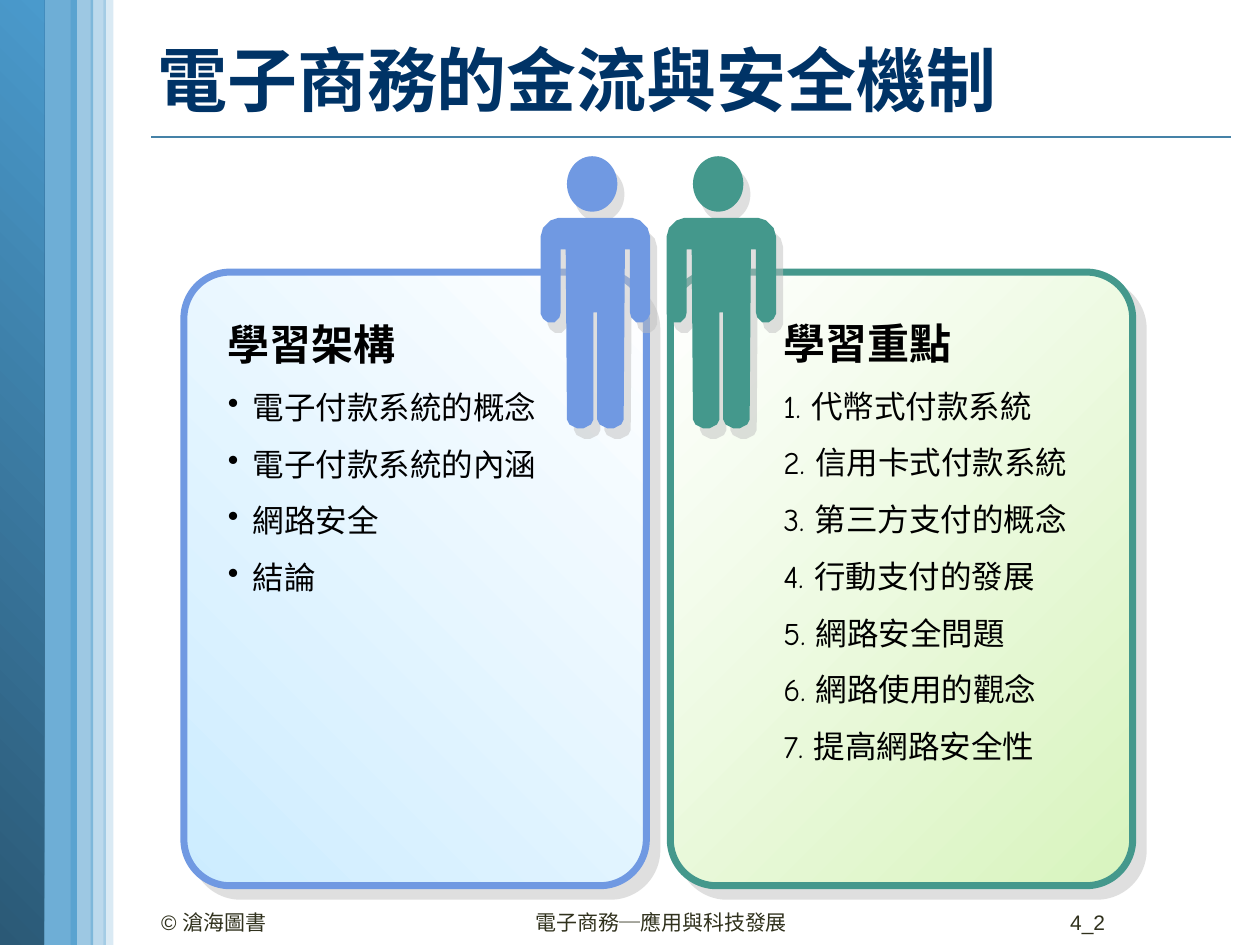
from lxml import etree
from pptx import Presentation
from pptx.dml.color import RGBColor
from pptx.enum.shapes import MSO_CONNECTOR, MSO_SHAPE
from pptx.enum.text import MSO_ANCHOR, MSO_AUTO_SIZE, PP_ALIGN
from pptx.oxml.ns import qn
from pptx.util import Inches, Pt

RECT, ROUND, OVAL = MSO_SHAPE.RECTANGLE, MSO_SHAPE.ROUNDED_RECTANGLE, MSO_SHAPE.OVAL
LEFT, RIGHT = PP_ALIGN.LEFT, PP_ALIGN.RIGHT
TOP, MID = MSO_ANCHOR.TOP, MSO_ANCHOR.MIDDLE
GROW, FIXED = MSO_AUTO_SIZE.SHAPE_TO_FIT_TEXT, MSO_AUTO_SIZE.NONE

HEX = {
    "navy": "003366", "rule": "4582A7", "sky": "4A9ACC", "deep": "2B5976",
    "foot": "30311D", "black": "000000", "white": "FFFFFF", "shade": "C0C0C0",
    "blue": "7099E2", "ice": "CCECFF", "green": "44988C", "lime": "D8F4BE",
}

TITLE = "電子商務的金流與安全機制"
FOOTER = [
    ("© 滄海圖書", 1.18, 2.33, LEFT),
    ("電子商務─應用與科技發展", 4.15, 2.36, LEFT),
    ("4_2", 8.15, 0.72, RIGHT),
]
PANELS = [
    {"tone": "blue", "fade": ("ice", "white", 45), "left": 1.46, "man": 4.29,
     "text": (1.71, 2.28, 3.1, 2.52), "head": "學習架構", "dent": 0.2, "mark": "•",
     "items": ["電子付款系統的概念", "電子付款系統的內涵", "網路安全", "結論"]},
    {"tone": "green", "fade": ("white", "lime", 315), "left": 5.32, "man": 5.29,
     "text": (6.12, 2.27, 2.83, 3.89), "head": "學習重點", "dent": 0.38, "mark": "",
     "items": ["1. 代幣式付款系統", "2. 信用卡式付款系統", "3. 第三方支付的概念",
               "4. 行動支付的發展", "5. 網路安全問題", "6. 網路使用的觀念",
               "7. 提高網路安全性"]},
]
BANDS = [
    (0.3, 0.31, "sky", 80), (-0.01, 0.36, None, 100), (0.82, 0.08, "sky", 20),
    (0.56, 0.18, "sky", 54), (0.72, 0.12, "sky", 37),
]
HALF = [
    (14, 0), (8, 2), (2, 8), (0, 15), (0, 76), (2, 80), (6, 83), (11, 83),
    (15, 79), (16, 75), (16, 25), (20, 25), (21, 160), (23, 164), (29, 167),
    (34, 167), (40, 164), (42, 160), (42, 75),
]
SPAN = 87
BODY = HALF + [(SPAN - x, y) for x, y in reversed(HALF)]

deck = Presentation()
deck.slide_width, deck.slide_height = Inches(10), Inches(7.5)
slide = deck.slides.add_slide(deck.slide_layouts[6])
shapes = slide.shapes
UNIT = deck.slide_width // 10


def grid(*nums):
    return [round(n * UNIT) for n in nums]


def rgb(name):
    return RGBColor.from_string(HEX[name])


def sub(node, tag, **attrs):
    return etree.SubElement(node, qn(tag), {k: str(v) for k, v in attrs.items()})


def solid(shape, tone, alpha=100):
    shape.shadow.inherit = False
    shape.line.fill.background()
    shape.fill.solid()
    shape.fill.fore_color.rgb = rgb(tone)
    if alpha < 100:
        tint = shape.element.spPr.find(qn("a:solidFill"))[0]
        sub(tint, "a:alpha", val=alpha * 1000)


def blend(shape, start, end, angle):
    shape.shadow.inherit = False
    shape.line.fill.background()
    shape.fill.gradient()
    shape.fill.gradient_angle = angle
    for stop, tone in zip(shape.fill.gradient_stops, (start, end)):
        stop.color.rgb = rgb(tone)


def shade(shape, dist, angle):
    glow = shape.element.spPr.find(qn("a:effectLst"))
    drop = sub(glow, "a:outerShdw", blurRad=0, dist=Pt(dist),
               dir=angle * 60000, algn="ctr", rotWithShape=0)
    tint = sub(drop, "a:srgbClr", val=HEX["shade"])
    sub(tint, "a:alpha", val=50000)


def text_box(spot, anchor=TOP, fit=FIXED):
    frame = shapes.add_textbox(*grid(*spot)).text_frame
    frame.word_wrap = True
    frame.vertical_anchor = anchor
    frame.auto_size = fit
    return frame


def write(para, text, size, tone, face, bold=False):
    run = para.add_run()
    run.text = text
    font = run.font
    font.name, font.size, font.bold = face, Pt(size), bold
    font.color.rgb = rgb(tone)


def draw_man(left, tone):
    head = shapes.add_shape(OVAL, *grid(left + 0.21, 1.24, 0.4, 0.44))
    pen = shapes.build_freeform(*BODY[0], scale=UNIT / 100)
    pen.add_line_segments(BODY[1:], close=True)
    body = pen.convert_to_shape(*grid(left, 1.73))
    for part in (head, body):
        solid(part, tone)
        shade(part, 7.2, 56)


def draw_list(panel):
    frame = text_box(panel["text"], fit=GROW)
    para = frame.paragraphs[0]
    para.line_spacing = 1.5
    write(para, panel["head"], 24, "black", "Comic Neue", True)
    dent = Inches(panel["dent"])
    for item in panel["items"]:
        para = frame.add_paragraph()
        para.line_spacing = 1.5
        props = para._p.get_or_add_pPr()
        props.set("marL", str(dent))
        props.set("indent", str(-dent))
        if panel["mark"]:
            sub(props, "a:buChar", char=panel["mark"])
        write(para, item, 18, "black", "Comic Neue")


rule = shapes.add_connector(MSO_CONNECTOR.STRAIGHT, *grid(1.2, 1.09, 9.77, 1.09))
rule.line.color.rgb = rgb("rule")
rule.line.width = Pt(1)
sub(rule.element.spPr, "a:effectLst")

for left, width, tone, alpha in BANDS:
    band = shapes.add_shape(RECT, *grid(left, 0, width, 7.5))
    if tone:
        solid(band, tone, alpha)
    else:
        blend(band, "deep", "sky", 45)

frame = text_box((1.15, 0.07, 8.7, 1.11), MID)
write(frame.paragraphs[0], TITLE, 40, "navy", "Comic Neue", True)

for panel in PANELS:
    card = shapes.add_shape(ROUND, *grid(panel["left"], 2.16, 3.67, 4.87))
    card.adjustments[0] = 0.1
    blend(card, *panel["fade"])
    card.line.color.rgb = rgb(panel["tone"])
    card.line.width = Pt(4)
    shade(card, 8.5, 45)
    draw_man(panel["man"], panel["tone"])
    draw_list(panel)

for text, left, width, side in FOOTER:
    para = text_box((left, 7.17, width, 0.26)).paragraphs[0]
    para.alignment = side
    write(para, text, 12, "foot", "Arial")

deck.save("out.pptx")
